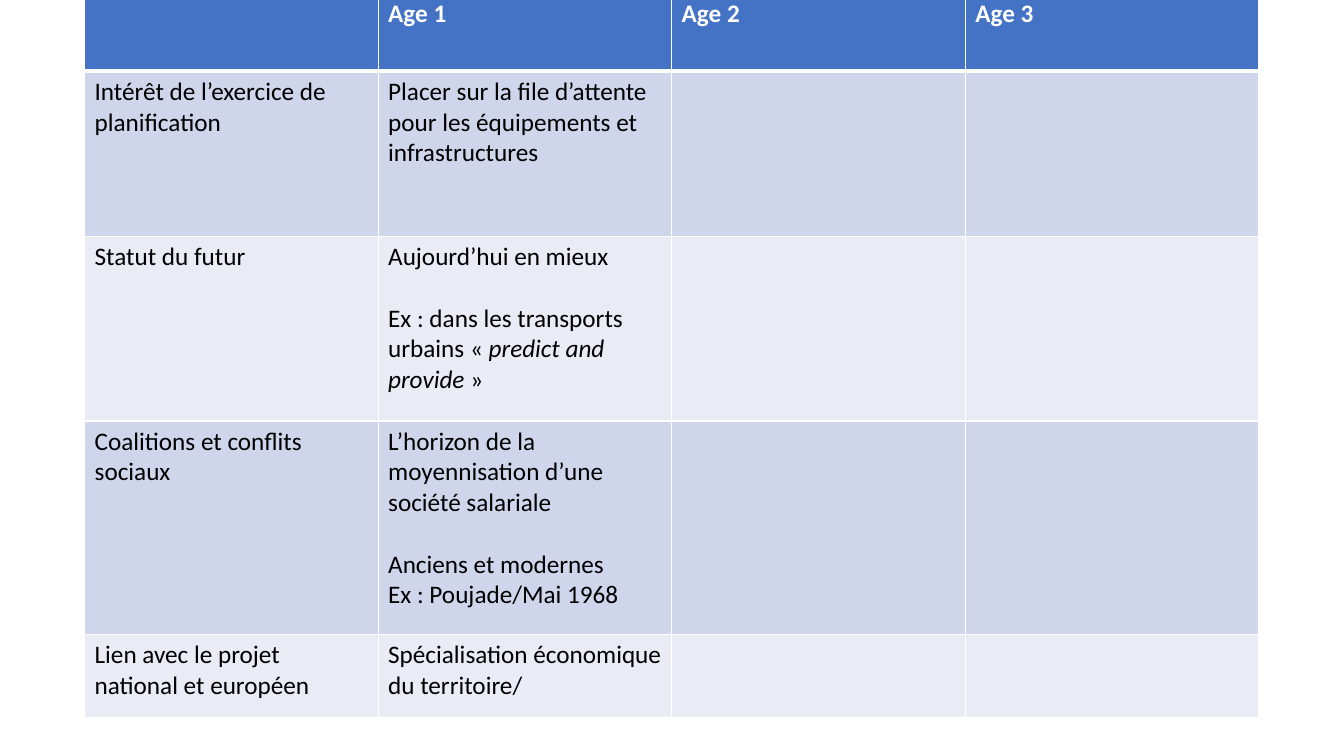
from lxml import etree
from pptx import Presentation
from pptx.dml import color
from pptx.oxml import ns
from pptx.util import Pt

FONT = "Calibri"
SIZE = 18
LINE = 22
WHITE, BLACK, HEADER = "FFFFFF", "000000", "4472C4"
BANDS = ["CFD5EA", "E9EBF5"]
ROW_HEIGHTS = [55.4, 118.1, 131.8, 152.6, 59]

# Blocks are separated by a one-line gap; asterisks enclose italics.
ROWS = [
    [[], [["Age 1"]], [["Age 2"]], [["Age 3"]]],
    [[["Intérêt de l’exercice de planification"]],
     [["Placer sur la file d’attente pour les équipements et infrastructures"]], [], []],
    [[["Statut du futur"]],
     [["Aujourd’hui en mieux"],
      ["Ex : dans les transports urbains « *predict and provide *»"]], [], []],
    [[["Coalitions et conflits sociaux"]],
     [["L’horizon de la moyennisation d’une société salariale"],
      ["Anciens et modernes", "Ex : Poujade/Mai 1968"]], [], []],
    [[["Lien avec le projet national et européen"]],
     [["Spécialisation économique du territoire/"]], [], []],
]


def rgb(value):
    return color.RGBColor.from_string(value)


def set_borders(cell, widths):
    tc_pr = cell._tc.get_or_add_tcPr()
    for side, width in zip("LRTB", widths):
        ln = etree.SubElement(tc_pr, ns.qn(f"a:ln{side}"), w=str(Pt(width)))
        fill = etree.SubElement(ln, ns.qn("a:solidFill"))
        etree.SubElement(fill, ns.qn("a:srgbClr"), val=WHITE)


def write_cell(cell, blocks, ink, bold):
    tf = cell.text_frame
    lines = [(line, b > 0 and i == 0)
             for b, block in enumerate(blocks) for i, line in enumerate(block)]
    for n, (line, gap) in enumerate(lines):
        p = tf.add_paragraph() if n else tf.paragraphs[0]
        if gap:
            p.space_before = Pt(LINE)
        for k, part in enumerate(line.split("*")):
            r = p.add_run()
            r.text = part
            r.font.name = FONT
            r.font.size = Pt(SIZE)
            r.font.bold = bold
            r.font.italic = k % 2 == 1
            r.font.color.rgb = rgb(ink)


def add_ages_table(s, left, top, width, heights):
    columns = len(ROWS[0])
    frame = s.shapes.add_table(len(ROWS), columns, Pt(left), Pt(top),
                               Pt(width), Pt(sum(heights)))
    table = frame.table
    for column in table.columns:
        column.width = Pt(width / columns)
    for i, (row, height) in enumerate(zip(ROWS, heights)):
        table.rows[i].height = Pt(height)
        header = i == 0
        for j, blocks in enumerate(row):
            cell = table.cell(i, j)
            set_borders(cell, [1, 1, 3 if i == 1 else 1, 3 if header else 1])
            cell.fill.solid()
            cell.fill.fore_color.rgb = rgb(HEADER if header else BANDS[(i - 1) % 2])
            write_cell(cell, blocks, WHITE if header else BLACK, header)


def main():
    prs = Presentation()
    prs.slide_width, prs.slide_height = Pt(960), Pt(540)
    s = prs.slides.add_slide(prs.slide_layouts[6])
    add_ages_table(s, 60.4, -4.5, 838.8, ROW_HEIGHTS)
    prs.save("out.pptx")


if __name__ == "__main__":
    main()
